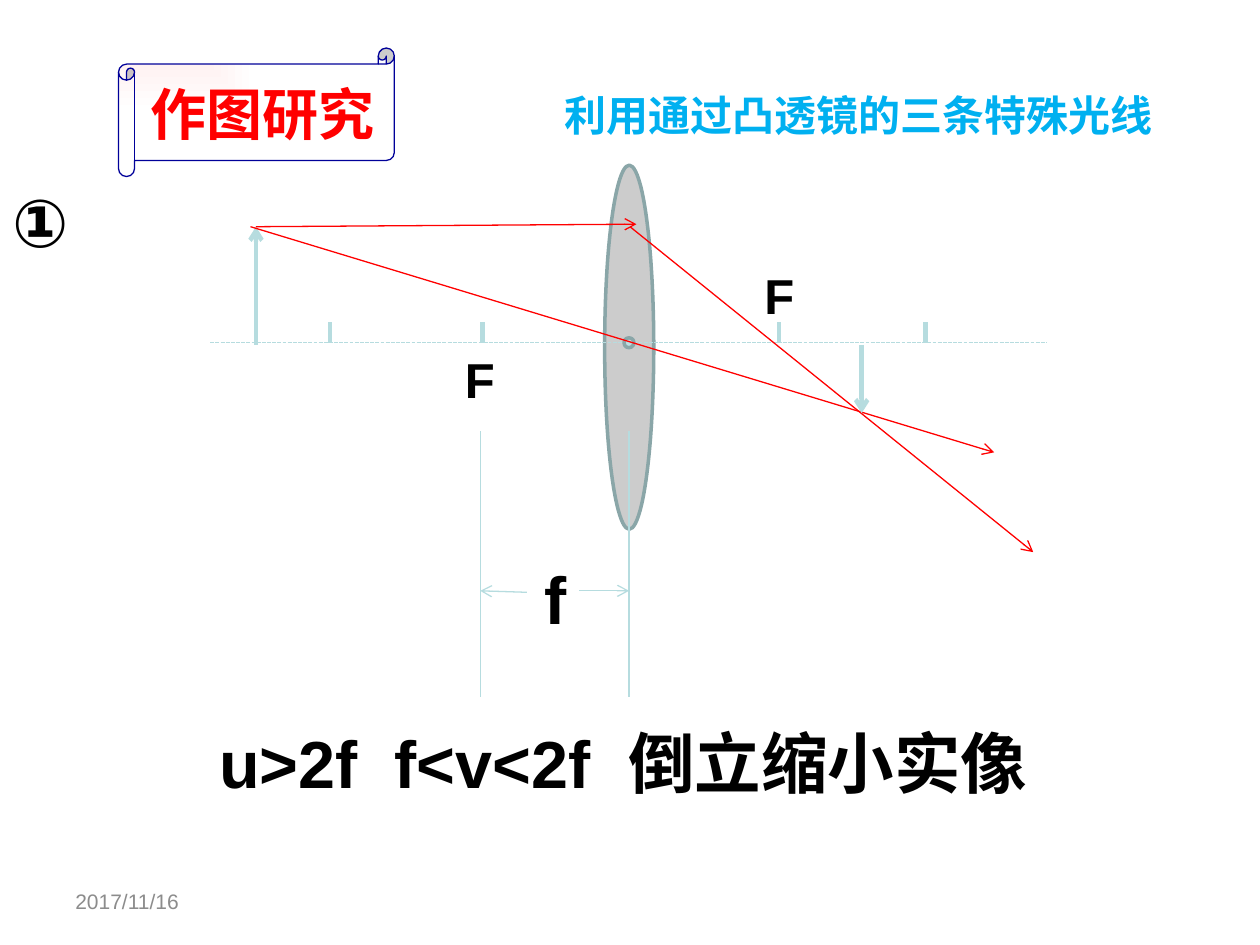
from lxml.etree import SubElement
from pptx import Presentation
from pptx.dml.color import RGBColor
from pptx.enum.dml import MSO_LINE
from pptx.enum.shapes import MSO_CONNECTOR, MSO_SHAPE
from pptx.enum.text import MSO_ANCHOR, MSO_AUTO_SIZE, PP_ALIGN
from pptx.oxml.ns import qn
from pptx.util import Cm, Pt

BLACK = RGBColor(0x00, 0x00, 0x00)
WHITE = RGBColor(0xFF, 0xFF, 0xFF)
RED = RGBColor(0xFF, 0x00, 0x00)
SKY = RGBColor(0x00, 0xB0, 0xF0)
NAVY = RGBColor(0x00, 0x00, 0x99)
PINK = RGBColor(0xFF, 0xED, 0xED)
GREY = RGBColor(0x8C, 0x8C, 0x8C)
LENS_GREY = RGBColor(0xCC, 0xCC, 0xCC)
LENS_EDGE = RGBColor(0x8A, 0xA6, 0xA8)
CENTRE_TEAL = RGBColor(0xBB, 0xE0, 0xE3)
TEAL = RGBColor(0xB6, 0xDC, 0xDF)
CJK = "Noto Sans CJK SC"

AXIS_Y = 6.91
LENS_X = 12.68
FOCUS_X = 9.68

deck = Presentation()
deck.slide_width, deck.slide_height = Cm(25.4), Cm(19.05)
slide = deck.slides.add_slide(deck.slide_layouts[5])
shapes = slide.shapes


def write(box, text, size, color, font="Arial", bold=True, east_asian=None,
          leading=1.2, wrap=True, align=PP_ALIGN.LEFT, anchor=MSO_ANCHOR.TOP):
    frame = box.text_frame
    frame.word_wrap = wrap
    frame.auto_size = MSO_AUTO_SIZE.NONE
    frame.vertical_anchor = anchor
    paragraph = frame.paragraphs[0]
    paragraph.alignment = align
    paragraph.line_spacing = Pt(round(size * leading, 1))
    run = paragraph.add_run()
    run.text = text
    run.font.name, run.font.size, run.font.bold = font, Pt(size), bold
    run.font.color.rgb = color
    if east_asian:
        SubElement(run.font._element, qn("a:ea")).set("typeface", east_asian)


def draw_line(x1, y1, x2, y2, color=TEAL, width=0.75, arrow=False):
    line = shapes.add_connector(MSO_CONNECTOR.STRAIGHT, Cm(x1), Cm(y1), Cm(x2), Cm(y2))
    line.line.color.rgb = color
    line.line.width = Pt(width)
    if arrow:
        SubElement(line.line._get_or_add_ln(), qn("a:tailEnd")).set("type", "arrow")
    SubElement(line._element.spPr, qn("a:effectLst"))
    return line


# Heading
heading = shapes.title
heading.left, heading.top, heading.width, heading.height = Cm(11.13), Cm(1.57), Cm(12.7), Cm(1.3)
write(heading, "利用通过凸透镜的三条特殊光线", 24, SKY, font=CJK, east_asian=CJK, leading=1.32)

# Lens
lens = shapes.add_shape(MSO_SHAPE.OVAL, Cm(12.19), Cm(3.33), Cm(0.99), Cm(7.34))
lens.shadow.inherit = False
lens.fill.solid()
lens.fill.fore_color.rgb = LENS_GREY
lens.line.color.rgb = LENS_EDGE
lens.line.width = Pt(2)

# Principal axis with the marks for F and 2F
axis = draw_line(4.24, AXIS_Y, 21.11, AXIS_Y)
axis.line.dash_style = MSO_LINE.SQUARE_DOT
for mark_x in (6.65, 9.73, 15.7, 18.66):
    draw_line(mark_x, 6.5, mark_x, AXIS_Y, width=2.5)

# Focal length dimension
for edge_x in (FOCUS_X, LENS_X):
    draw_line(edge_x, 8.69, edge_x, 14.05)
draw_line(11.68, 11.91, LENS_X, 11.91, arrow=True)
draw_line(10.62, 11.94, FOCUS_X, 11.91, arrow=True)

# Scroll banner
scroll = shapes.add_shape(MSO_SHAPE.HORIZONTAL_SCROLL, Cm(2.39), Cm(0.97), Cm(5.56), Cm(2.59))
scroll.shadow.inherit = False
scroll.adjustments[0] = 0.125
scroll.fill.gradient()
for stop, position, color in zip(scroll.fill.gradient_stops, (0, 1), (PINK, WHITE)):
    stop.position = position
    stop.color.rgb = color
gradient = scroll._element.spPr.find(qn("a:gradFill"))
gradient.remove(gradient.find(qn("a:lin")))
corner = SubElement(gradient, qn("a:path"))
corner.set("path", "rect")
focus_rect = SubElement(corner, qn("a:fillToRect"))
for side in "rb":
    focus_rect.set(side, "100000")
scroll.line.color.rgb = NAVY
scroll.line.width = Pt(0.75)
banner = shapes.add_textbox(Cm(2.67), Cm(1.35), Cm(5.26), Cm(1.63))
write(banner, "作图研究", 32, RED, font="Times New Roman", east_asian=CJK,
      leading=1.32, align=PP_ALIGN.CENTER)

# Optical centre
centre = shapes.add_shape(MSO_SHAPE.OVAL, Cm(12.58), Cm(6.81), Cm(0.2), Cm(0.2))
centre.shadow.inherit = False
centre.fill.solid()
centre.fill.fore_color.rgb = CENTRE_TEAL
centre.line.color.rgb = LENS_EDGE
centre.line.width = Pt(2)

# Object, rays and image
draw_line(5.16, 6.95, 5.16, 4.57, width=2.5, arrow=True)
for ray in ((5.16, 4.57, 12.83, 4.52), (12.7, 4.57, 20.83, 11.13), (5.05, 4.57, 20.04, 9.12)):
    draw_line(*ray, color=RED, arrow=True)
draw_line(17.37, 6.95, 17.37, 8.33, width=2.5, arrow=True)

# Labels for the foci, the focal length and the case number
for label, size, left, top, width, height, wrap in (
    ("F", 28, 15.16, 5.23, 0.99, 1.45, True),
    ("F", 28, 9.12, 6.93, 0.99, 1.45, True),
    ("f", 38, 10.72, 11.13, 0.97, 1.88, False),
    ("①", 38, 0, 3.53, 3.61, 1.85, True),
):
    label_box = shapes.add_textbox(Cm(left), Cm(top), Cm(width), Cm(height))
    write(label_box, label, size, BLACK, wrap=wrap)

# Conclusion
conclusion = shapes.add_textbox(Cm(4.17), Cm(14.27), Cm(17.07), Cm(1.88))
conclusion.text_frame.margin_top = Cm(0.29)
write(conclusion, "u>2f  f<v<2f  倒立缩小实像", 38, BLACK, east_asian=CJK)

# Date
date = shapes.add_textbox(Cm(1.27), Cm(17.65), Cm(5.92), Cm(1.02))
write(date, "2017/11/16", 12, GREY, bold=False, anchor=MSO_ANCHOR.MIDDLE)

deck.save("out.pptx")
